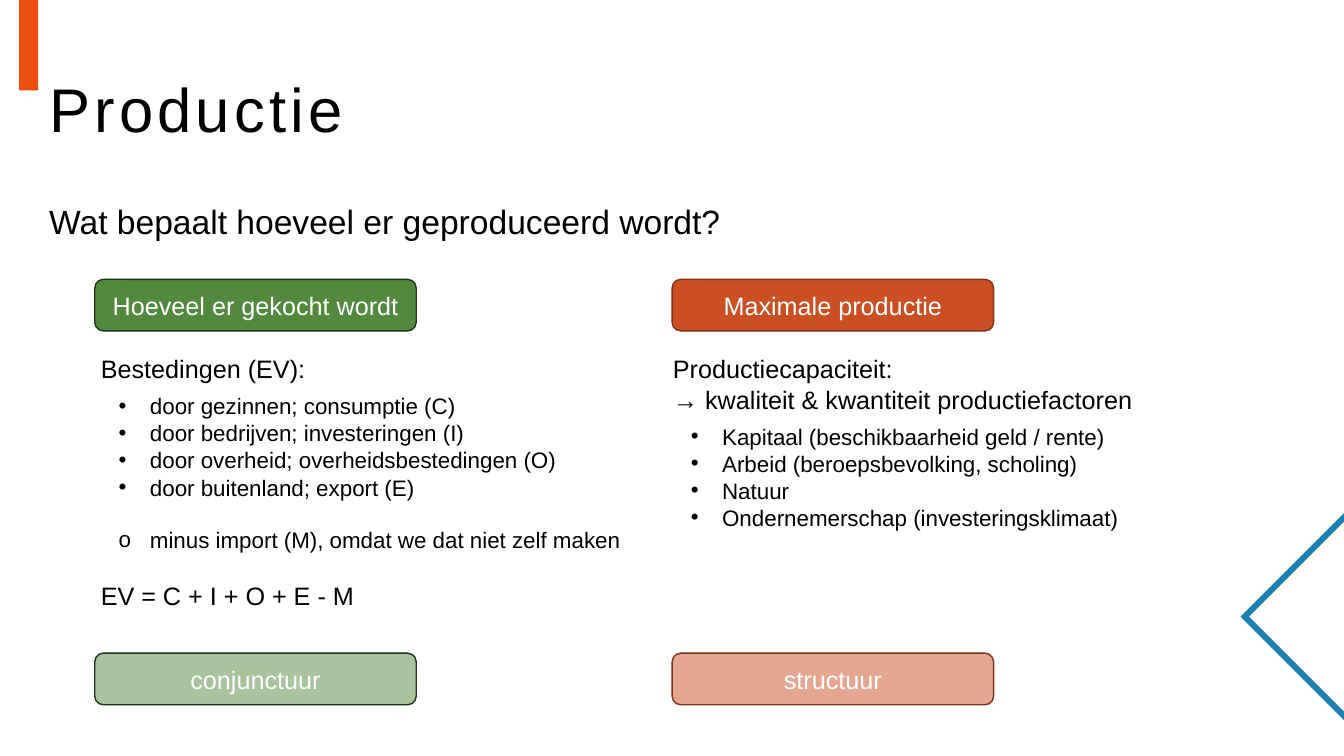
from dataclasses import dataclass

from lxml import etree
from pptx import Presentation
from pptx import util as u
from pptx.dml.color import RGBColor
from pptx.enum import shapes, text
from pptx.oxml import ns


@dataclass(frozen=True)
class Theme:
    font: str = "Arial"
    ink: str = "000000"
    light: str = "FFFFFF"
    accent: str = "ED4D0F"
    chevron: str = "1A80B6"
    green: str = "52893F"
    green_edge: str = "1F3418"
    rust: str = "CA4F22"
    rust_edge: str = "813115"
    title: int = 44
    question: int = 24
    body: int = 18
    item: int = 16
    item_line: float = 19.3


THEME = Theme()
SLIDE_WIDTH, SLIDE_HEIGHT = 33.87, 19.05
LABEL_WIDTH, LABEL_HEIGHT = 8.1, 1.3
CAUSE_TOP, TEXT_TOP, TERM_TOP = 7.04, 8.79, 16.46


def rgb(code):
    return RGBColor.from_string(code)


def cm(*lengths):
    return [u.Cm(length) for length in lengths]


def add_child(parent, tag, **attributes):
    return etree.SubElement(parent, ns.qn(tag), attributes)


def write(frame, content, size=THEME.body, color=THEME.ink, align=text.PP_ALIGN.LEFT,
          before=0, after=0, line=None, spacing=0, bullet=None):
    """Fill the first paragraph of the frame, or add one after it."""
    first = frame.paragraphs[0]
    paragraph = first if not first.runs else frame.add_paragraph()
    paragraph.alignment = align
    paragraph.space_before, paragraph.space_after = u.Pt(before), u.Pt(after)
    if line:
        paragraph.line_spacing = line
    if bullet:
        paragraph.level = 1
        properties = paragraph._p.get_or_add_pPr()
        properties.set("marL", str(u.Cm(1.24)))
        properties.set("indent", str(u.Cm(-0.79)))
        add_child(properties, "a:buFont", typeface=THEME.font)
        add_child(properties, "a:buChar", char=bullet)
    run = paragraph.add_run()
    run.text = content
    run.font.name, run.font.size = THEME.font, u.Pt(size)
    run.font.color.rgb = rgb(color)
    if spacing:
        run.font._element.set("spc", str(spacing * 100))


def write_items(frame, items, bullet="•", **style):
    for item in items:
        write(frame, item, size=THEME.item, line=u.Pt(THEME.item_line),
              bullet=bullet, **style)


def add_text_frame(slide, left, top, width, height, anchor=text.MSO_ANCHOR.TOP):
    frame = slide.shapes.add_textbox(*cm(left, top, width, height)).text_frame
    frame.word_wrap = True
    frame.vertical_anchor = anchor
    return frame


def add_label(slide, caption, left, top, fill, edge, alpha=None):
    """Add a rounded label; alpha is the opacity of its fill in percent."""
    label = slide.shapes.add_shape(shapes.MSO_SHAPE.ROUNDED_RECTANGLE,
                                   *cm(left, top, LABEL_WIDTH, LABEL_HEIGHT))
    label.shadow.inherit = False
    label.fill.solid()
    label.fill.fore_color.rgb = rgb(fill)
    if alpha:
        swatch = label._element.spPr.find(ns.qn("a:solidFill"))[0]
        add_child(swatch, "a:alpha", val=str(alpha * 1000))
    label.line.color.rgb = rgb(edge)
    label.line.width = u.Pt(1)
    label.text_frame.vertical_anchor = text.MSO_ANCHOR.MIDDLE
    write(label.text_frame, caption, color=THEME.light, align=text.PP_ALIGN.CENTER)


def add_accent_bar(slide):
    bar = slide.shapes.add_shape(shapes.MSO_SHAPE.RECTANGLE,
                                 *cm(0.48, -0.64, 0.48, 2.92))
    bar.shadow.inherit = False
    bar.fill.solid()
    bar.fill.fore_color.rgb = rgb(THEME.accent)
    bar.line.fill.background()


def add_chevron(slide, tip_x=31.37, tip_y=15.54, reach=2.74):
    builder = slide.shapes.build_freeform(*cm(tip_x + reach, tip_y - reach))
    builder.add_line_segments([cm(tip_x, tip_y), cm(tip_x + reach, tip_y + reach)],
                              close=False)
    chevron = builder.convert_to_shape()
    chevron.shadow.inherit = False
    chevron.fill.background()
    chevron.line.color.rgb = rgb(THEME.chevron)
    chevron.line.width = u.Pt(4.25)
    add_child(chevron.line._get_or_add_ln(), "a:miter", lim="800000")


def add_column(slide, left, cause, term, fill, edge):
    add_label(slide, cause, left, CAUSE_TOP, fill, edge)
    add_label(slide, term, left, TERM_TOP, fill, edge, alpha=50)


def add_spending(slide):
    spending = add_text_frame(slide, 2.29, TEXT_TOP, 13.79, 6.81)
    write(spending, "Bestedingen (EV):", after=6)
    write_items(spending, ["door gezinnen; consumptie (C)",
                           "door bedrijven; investeringen (I)",
                           "door overheid; overheidsbestedingen (O)",
                           "door buitenland; export (E)"])
    write_items(spending, ["minus import (M), omdat we dat niet zelf maken"],
                bullet="o", before=18.4)
    write(spending, "EV = C + I + O + E - M", before=19)


def add_capacity(slide):
    capacity = add_text_frame(slide, 16.71, TEXT_TOP, 12.19, 4.75)
    write(capacity, "Productiecapaciteit:")
    write(capacity, "→ kwaliteit & kwantiteit productiefactoren", after=6)
    write_items(capacity, ["Kapitaal (beschikbaarheid geld / rente)",
                           "Arbeid (beroepsbevolking, scholing)",
                           "Natuur",
                           "Ondernemerschap (investeringsklimaat)"])


def main():
    deck = Presentation()
    deck.slide_width, deck.slide_height = cm(SLIDE_WIDTH, SLIDE_HEIGHT)
    slide = deck.slides.add_slide(deck.slide_layouts[6])

    add_chevron(slide)
    add_accent_bar(slide)
    heading = add_text_frame(slide, 0.99, 0.99, 32.03, 3.68, text.MSO_ANCHOR.MIDDLE)
    write(heading, "Productie", size=THEME.title, line=0.9, spacing=3)
    question = add_text_frame(slide, 0.99, 5.05, 32.03, 13)
    write(question, "Wat bepaalt hoeveel er geproduceerd wordt?",
          size=THEME.question, line=0.9)

    add_column(slide, 2.39, "Hoeveel er gekocht wordt", "conjunctuur",
               THEME.green, THEME.green_edge)
    add_column(slide, 16.94, "Maximale productie", "structuur",
               THEME.rust, THEME.rust_edge)
    add_spending(slide)
    add_capacity(slide)
    deck.save("out.pptx")


if __name__ == "__main__":
    main()
